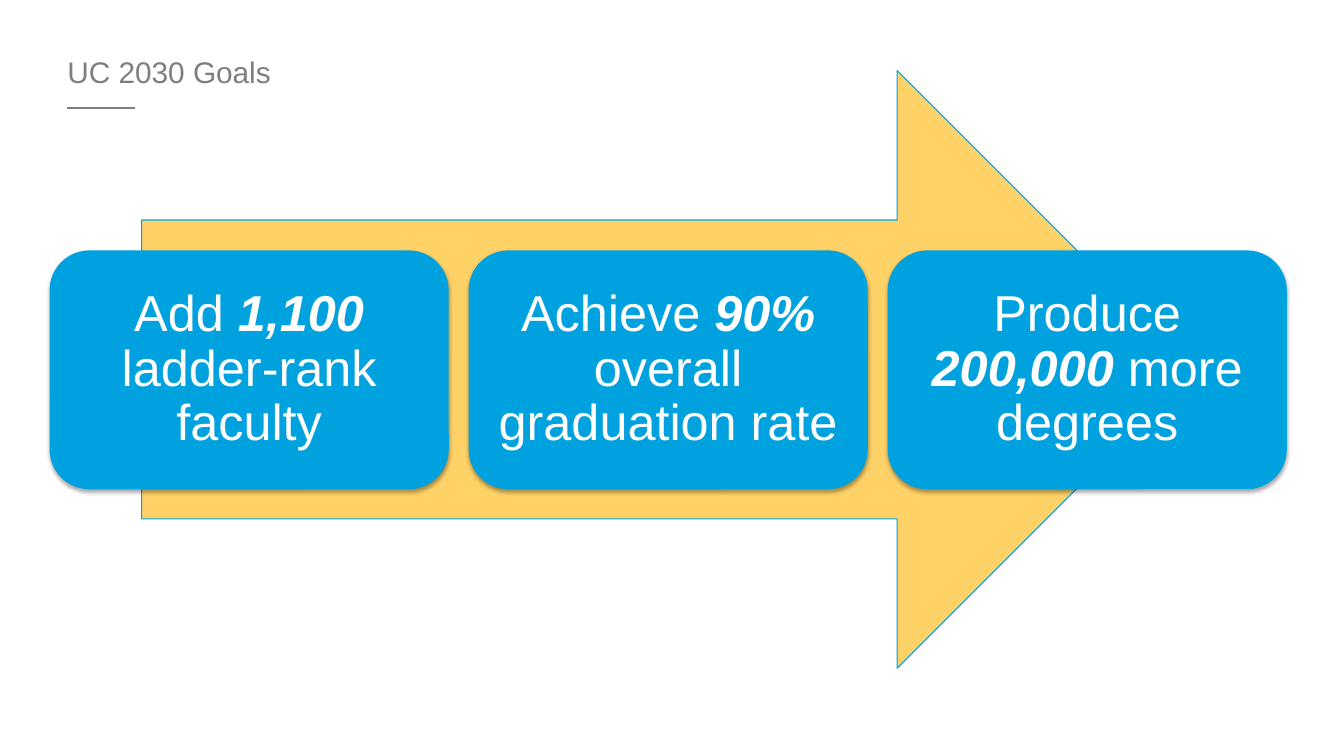
"""Build the UC 2030 goals slide."""
import lxml.etree
import pptx
import pptx.dml.color
import pptx.enum.shapes
import pptx.enum.text
import pptx.oxml.ns
import pptx.util

Cm = pptx.util.Cm
Pt = pptx.util.Pt
RGBColor = pptx.dml.color.RGBColor
SHAPES = pptx.enum.shapes.MSO_SHAPE
ALIGN = pptx.enum.text.PP_ALIGN
ANCHOR = pptx.enum.text.MSO_ANCHOR
qn = pptx.oxml.ns.qn

GRAY = RGBColor(0x7F, 0x7F, 0x7F)
GOLD = RGBColor(0xFF, 0xD2, 0x67)
BLUE = RGBColor(0x00, 0xA1, 0xDF)
WHITE = RGBColor(0xFF, 0xFF, 0xFF)
BLACK = RGBColor(0x00, 0x00, 0x00)

GOALS = [
    ("Add ", "1,100", " ladder-rank faculty"),
    ("Achieve ", "90% ", "overall graduation rate"),
    ("Produce ", "200,000", " more degrees"),
]
CARD_LEFT, CARD_TOP = 1.25, 6.31
CARD_WIDTH, CARD_HEIGHT = 10.06, 6.02
CARD_PITCH = 10.56


def add_run(paragraph, text, font="Arial", size=36, color=WHITE, strong=False):
    """Add formatted text; strong text is bold and italic."""
    run = paragraph.add_run()
    run.text = text
    run.font.name = font
    run.font.size = Pt(size)
    run.font.color.rgb = color
    run.font.bold = strong
    run.font.italic = strong


def prepare_frame(frame, margin, anchor):
    """Set wrapping, equal margins and vertical anchor of a text frame."""
    frame.word_wrap = True
    frame.auto_size = pptx.enum.text.MSO_AUTO_SIZE.NONE
    frame.vertical_anchor = anchor
    frame.margin_left = frame.margin_right = Cm(margin)
    frame.margin_top = frame.margin_bottom = Cm(margin)


class GoalsSlide:
    """Hold the style and the current slide."""

    def __init__(self, presentation):
        """Start a title-only slide."""
        self.slide = presentation.slides.add_slide(presentation.slide_layouts[5])
        self.shapes = self.slide.shapes

    def title(self, text):
        """Place and format the title."""
        title = self.shapes.title
        title.left, title.top = Cm(1.7), Cm(1.35)
        title.width, title.height = Cm(30.48), Cm(0.91)
        prepare_frame(title.text_frame, 0, ANCHOR.TOP)
        paragraph = title.text_frame.paragraphs[0]
        paragraph.alignment = ALIGN.LEFT
        add_run(paragraph, text, size=21.3, color=GRAY)

    def rule(self, left, top, right):
        """Draw the short line below the title."""
        line = self.shapes.add_connector(
            pptx.enum.shapes.MSO_CONNECTOR.STRAIGHT,
            Cm(left), Cm(top), Cm(right), Cm(top))
        line.line.color.rgb = GRAY
        line.line.width = Pt(2)
        lxml.etree.SubElement(line._element.spPr, qn("a:effectLst"))

    def block(self, kind, left, top, width, height, fill):
        """Draw a filled preset shape without a shadow."""
        shape = self.shapes.add_shape(
            kind, Cm(left), Cm(top), Cm(width), Cm(height))
        shape.shadow.inherit = False
        shape.fill.solid()
        shape.fill.fore_color.rgb = fill
        return shape

    def arrow(self, left, top, width, height):
        """Draw the large arrow behind the goals."""
        arrow = self.block(SHAPES.RIGHT_ARROW, left, top, width, height, GOLD)
        arrow.line.color.rgb = BLUE
        arrow.line.width = Pt(0.75)

    def card(self, left, goal):
        """Draw a rounded card with one goal and its stressed figure."""
        card = self.block(SHAPES.ROUNDED_RECTANGLE, left, CARD_TOP,
                          CARD_WIDTH, CARD_HEIGHT, BLUE)
        card.adjustments[0] = 0.167
        card.line.fill.background()
        self.drop_shadow(card)
        prepare_frame(card.text_frame, 0.38, ANCHOR.MIDDLE)
        paragraph = card.text_frame.paragraphs[0]
        paragraph.alignment = ALIGN.CENTER
        paragraph.line_spacing = 0.9
        before, figure, after = goal
        add_run(paragraph, before)
        add_run(paragraph, figure, strong=True)
        add_run(paragraph, after)

    def drop_shadow(self, shape):
        """Give a shape a soft shadow straight below it."""
        effects = shape._element.spPr.find(qn("a:effectLst"))
        shadow = lxml.etree.SubElement(
            effects, qn("a:outerShdw"), blurRad=str(Pt(3.1)),
            dist=str(Pt(1.8)), dir="5400000", rotWithShape="0")
        color = lxml.etree.SubElement(shadow, qn("a:srgbClr"), val=str(BLACK))
        lxml.etree.SubElement(color, qn("a:alpha"), val="35000")


def main():
    """Build and save the presentation."""
    presentation = pptx.Presentation()
    presentation.slide_width = Cm(33.87)
    presentation.slide_height = Cm(19.05)
    slide = GoalsSlide(presentation)
    slide.title("UC 2030 Goals")
    slide.rule(1.69, 2.72, 3.39)
    slide.arrow(3.57, 1.78, 26.57, 15.06)
    for index, goal in enumerate(GOALS):
        slide.card(CARD_LEFT + index * CARD_PITCH, goal)
    presentation.save("out.pptx")


if __name__ == "__main__":
    main()
